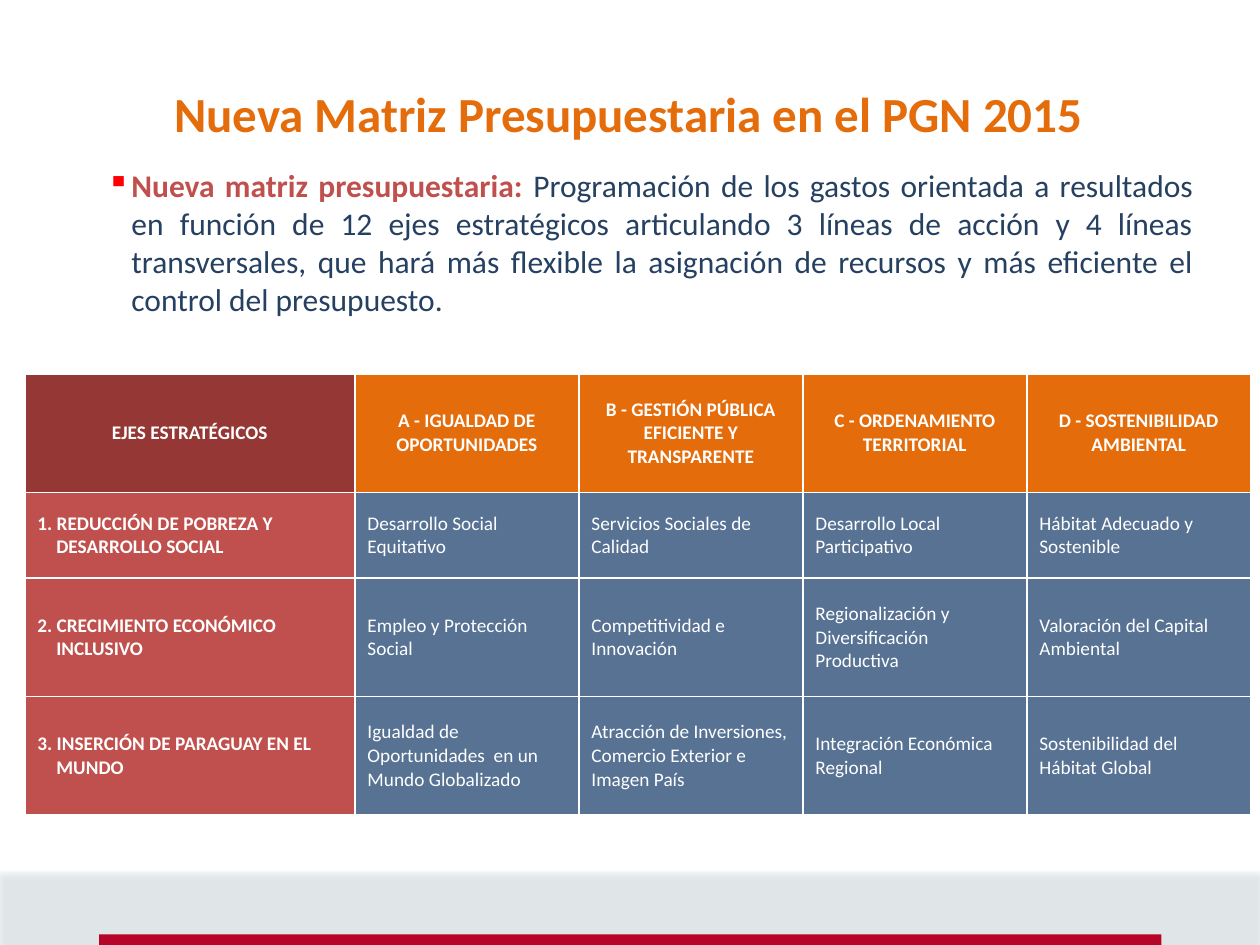
from lxml.etree import SubElement
from pptx import Presentation
from pptx.dml.color import RGBColor
from pptx.enum.shapes import MSO_SHAPE
from pptx.enum.text import MSO_ANCHOR, PP_ALIGN
from pptx.oxml import parse_xml
from pptx.oxml.ns import nsdecls, qn
from pptx.util import Pt

WHITE, ORANGE, RED, DARK_RED = "FFFFFF", "E46C0A", "C0504D", "953735"
NAVY, SLATE, PALE, CRIMSON = "254061", "577293", "DBEEF4", "B60527"

TITLE = "Nueva Matriz Presupuestaria en el PGN 2015"
LEAD = "Nueva matriz presupuestaria: "
BODY = (
    "Programación de los gastos orientada a resultados en función de 12 ejes "
    "estratégicos articulando 3 líneas de acción y 4 líneas transversales, que hará "
    "más flexible la asignación de recursos y más eficiente el control del presupuesto."
)
MATRIX = [
    ["EJES ESTRATÉGICOS", "A - IGUALDAD DE OPORTUNIDADES",
     "B - GESTIÓN PÚBLICA EFICIENTE Y TRANSPARENTE",
     "C - ORDENAMIENTO TERRITORIAL", "D - SOSTENIBILIDAD AMBIENTAL"],
    ["1. REDUCCIÓN DE POBREZA Y DESARROLLO SOCIAL", "Desarrollo Social Equitativo",
     "Servicios Sociales de Calidad", "Desarrollo Local Participativo",
     "Hábitat Adecuado y Sostenible"],
    ["2. CRECIMIENTO ECONÓMICO INCLUSIVO", "Empleo y Protección Social",
     "Competitividad e Innovación", "Regionalización y Diversificación Productiva",
     "Valoración del Capital Ambiental"],
    ["3. INSERCIÓN DE PARAGUAY EN EL MUNDO",
     "Igualdad de Oportunidades  en un Mundo Globalizado",
     "Atracción de Inversiones, Comercio Exterior e Imagen País",
     "Integración Económica Regional", "Sostenibilidad del Hábitat Global"],
]
COLUMN_WIDTHS = [188.6] + [128] * 4
ROW_HEIGHTS = [67.7, 49, 67.7, 67.7]


def color(value):
    return RGBColor.from_string(value)


class SlideBuilder:
    """Draws styled elements on the current slide, with lengths in points."""

    font_name = "Calibri"
    border_width = 1

    def __init__(self, slide):
        self.slide = slide

    def style(self, font, size, fill, bold=False):
        font.name, font.size, font.bold = self.font_name, Pt(size), bold
        font.color.rgb = color(fill)

    def indent(self, paragraph, hanging):
        properties = paragraph._p.get_or_add_pPr()
        properties.set("marL", str(Pt(hanging)))
        properties.set("indent", str(-Pt(hanging)))
        return properties

    def rectangle(self, left, top, width, height, fill):
        shape = self.slide.shapes.add_shape(
            MSO_SHAPE.RECTANGLE, Pt(left), Pt(top), Pt(width), Pt(height))
        shape.shadow.inherit = False
        shape.fill.solid()
        shape.fill.fore_color.rgb = color(fill)
        shape.line.fill.background()
        return shape

    def shaded_band(self, left, top, width, height, fill, opacity):
        shape = self.rectangle(left, top, width, height, fill)
        properties = shape._element.spPr
        fill_color = properties.find(qn("a:solidFill"))[0]
        SubElement(fill_color, qn("a:alpha"), val=str(opacity * 1000))
        properties.find(qn("a:effectLst")).append(parse_xml(
            f'<a:outerShdw {nsdecls("a")} blurRad="{Pt(3.1)}" dist="{Pt(1.8)}" '
            'dir="5400000" rotWithShape="0"><a:srgbClr val="000000">'
            '<a:alpha val="35000"/></a:srgbClr></a:outerShdw>'))

    def text_box(self, left, top, width, height, anchor, align):
        frame = self.slide.shapes.add_textbox(
            Pt(left), Pt(top), Pt(width), Pt(height)).text_frame
        frame.word_wrap = True
        frame.vertical_anchor = anchor
        paragraph = frame.paragraphs[0]
        paragraph.alignment = align
        return paragraph

    def title(self, text, *box):
        paragraph = self.text_box(*box, MSO_ANCHOR.MIDDLE, PP_ALIGN.CENTER)
        paragraph.text = text
        paragraph.line_spacing = Pt(20)
        self.style(paragraph.font, 28, ORANGE, True)

    def bullet(self, lead, body, *box):
        paragraph = self.text_box(*box, MSO_ANCHOR.TOP, PP_ALIGN.JUSTIFY)
        paragraph.space_after = Pt(6)
        properties = self.indent(paragraph, 14)
        bullet_color = SubElement(properties, qn("a:buClr"))
        SubElement(bullet_color, qn("a:srgbClr"), val="FF0000")
        SubElement(properties, qn("a:buChar"), char="▪")
        for text, fill, bold in ((lead, RED, True), (body, NAVY, False)):
            run = paragraph.add_run()
            run.text = text
            self.style(run.font, 18, fill, bold)

    def cell(self, cell, text, fill, bold, align, hanging):
        cell.text = text
        cell.vertical_anchor = MSO_ANCHOR.MIDDLE
        cell.fill.solid()
        cell.fill.fore_color.rgb = color(fill)
        paragraph = cell.text_frame.paragraphs[0]
        paragraph.alignment = align
        if hanging:
            self.indent(paragraph, hanging)
        self.style(paragraph.font, 11, WHITE, bold)
        for index, side in enumerate(("lnL", "lnR", "lnT", "lnB")):
            cell._tc.get_or_add_tcPr().insert(index, parse_xml(
                f'<a:{side} {nsdecls("a")} w="{Pt(self.border_width)}"><a:solidFill>'
                f'<a:srgbClr val="{WHITE}"/></a:solidFill></a:{side}>'))

    def matrix(self, left, top, rows, widths, heights):
        table = self.slide.shapes.add_table(
            len(rows), len(widths), Pt(left), Pt(top),
            Pt(sum(widths)), Pt(sum(heights))).table
        for column, width in zip(table.columns, widths):
            column.width = Pt(width)
        for row, height in zip(table.rows, heights):
            row.height = Pt(height)
        for i, texts in enumerate(rows):
            for j, text in enumerate(texts):
                header, label = i == 0, j == 0
                if header:
                    fill = DARK_RED if label else ORANGE
                else:
                    fill = RED if label else SLATE
                align = PP_ALIGN.CENTER if header else PP_ALIGN.LEFT
                hanging = 10.8 if label and not header else 0
                self.cell(table.cell(i, j), text, fill, header or label, align, hanging)


def main():
    presentation = Presentation()
    presentation.slide_width, presentation.slide_height = Pt(720), Pt(540)
    builder = SlideBuilder(presentation.slides.add_slide(presentation.slide_layouts[6]))
    builder.shaded_band(0, 498, 720, 42, PALE, 32)
    builder.rectangle(56.7, 534, 607, 18, CRIMSON)
    builder.title(TITLE, 35, 43, 648, 57)
    builder.bullet(LEAD, BODY, 54, 91.5, 635, 98.6)
    builder.matrix(14.2, 213.7, MATRIX, COLUMN_WIDTHS, ROW_HEIGHTS)
    presentation.save("out.pptx")


if __name__ == "__main__":
    main()
